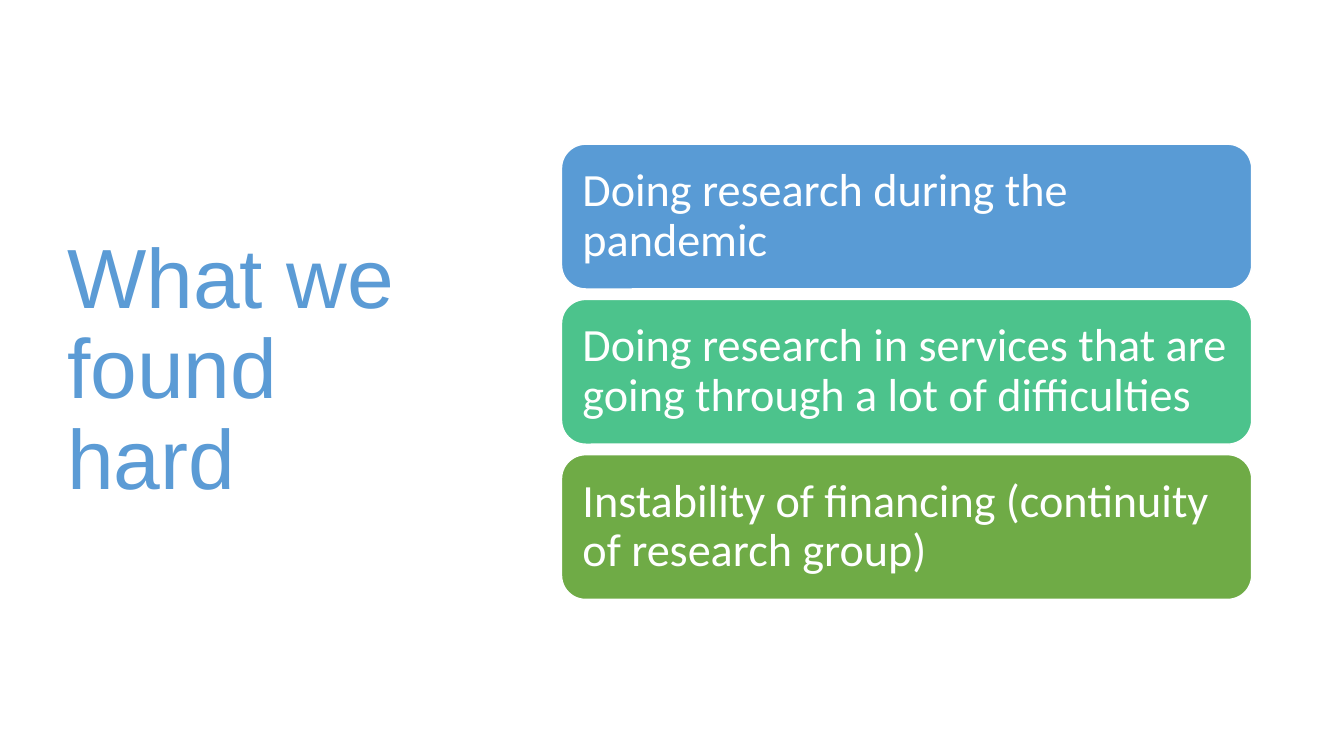
from pptx import Presentation
from pptx.dml.color import RGBColor
from pptx.enum.shapes import MSO_SHAPE as Preset
from pptx.enum.text import MSO_ANCHOR as Anchor, PP_ALIGN as Align
from pptx.util import Pt

CARD_LEFT, CARD_TOP = 401.1, 103
CARD_WIDTH, CARD_HEIGHT = 493, 103.4
CARD_STEP = 110.9

CARDS = [
    ("Doing research during the pandemic\u00a0", "599BD5"),
    ("Doing research in services that are going through a lot of difficulties\u00a0", "4CC38C"),
    ("Instability of financing (continuity of research group)", "6FAB46"),
]


def color(code):
    return RGBColor.from_string(code)


def write(shape, text, size, font, code, inset_x, inset_y):
    """Fill a shape with one left-aligned, vertically centred paragraph."""
    frame = shape.text_frame
    frame.word_wrap = True
    frame.vertical_anchor = Anchor.MIDDLE
    frame.margin_left = frame.margin_right = Pt(inset_x)
    frame.margin_top = frame.margin_bottom = Pt(inset_y)
    para = frame.paragraphs[0]
    para.alignment = Align.LEFT
    para.line_spacing = 0.9
    span = para.add_run()
    span.text = text
    span.font.size = Pt(size)
    span.font.name = font
    span.font.color.rgb = color(code)


deck = Presentation()
deck.slide_width, deck.slide_height = Pt(960), Pt(540)
page = deck.slides.add_slide(deck.slide_layouts[6])

title = page.shapes.add_textbox(Pt(41), Pt(48.8), Pt(299.5), Pt(433.4))
write(title, "What we found hard", 60, "Arial", "5B9BD5", 7.2, 3.6)

for index, (text, fill) in enumerate(CARDS):
    card = page.shapes.add_shape(
        Preset.ROUNDED_RECTANGLE,
        Pt(CARD_LEFT), Pt(CARD_TOP + index * CARD_STEP), Pt(CARD_WIDTH), Pt(CARD_HEIGHT),
    )
    card.shadow.inherit = False
    card.fill.solid()
    card.fill.fore_color.rgb = color(fill)
    card.line.color.rgb = color("FFFFFF")
    card.line.width = Pt(1)
    write(card, text, 33, "Calibri", "FFFFFF", 9.9, 9.9)

deck.save("out.pptx")
